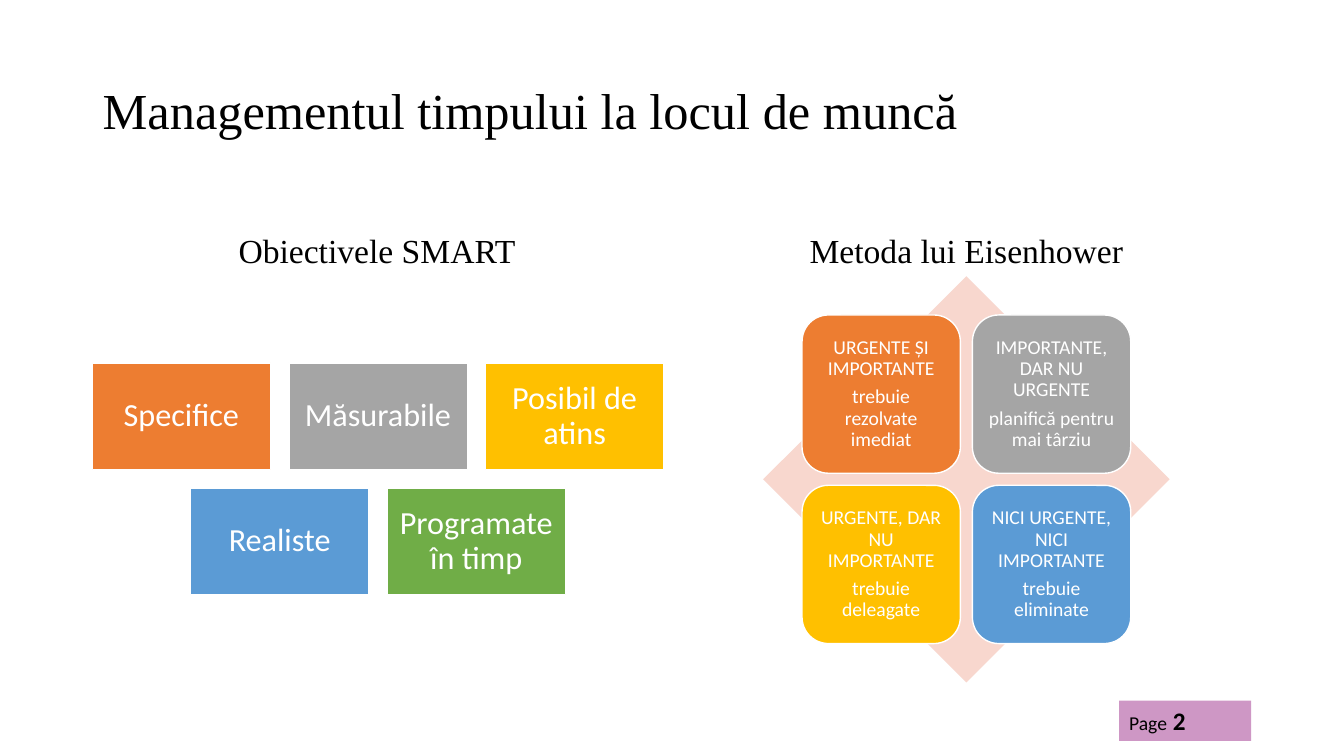
"""Builds the slide on time management: SMART goals and the Eisenhower matrix."""
from lxml import etree
from pptx import Presentation
from pptx.dml.color import RGBColor
from pptx.enum.shapes import MSO_SHAPE
from pptx.enum.text import MSO_ANCHOR, PP_ALIGN
from pptx.oxml.ns import qn
from pptx.util import Inches, Pt

RECTANGLE, ROUNDED, DIAMOND = MSO_SHAPE.RECTANGLE, MSO_SHAPE.ROUNDED_RECTANGLE, MSO_SHAPE.DIAMOND
LEFT, CENTER = PP_ALIGN.LEFT, PP_ALIGN.CENTER
TOP, MIDDLE, BOTTOM = MSO_ANCHOR.TOP, MSO_ANCHOR.MIDDLE, MSO_ANCHOR.BOTTOM

BLACK = RGBColor(0x00, 0x00, 0x00)
WHITE = RGBColor(0xFF, 0xFF, 0xFF)
ORANGE = RGBColor(0xED, 0x7D, 0x31)
GRAY = RGBColor(0xA5, 0xA5, 0xA5)
GOLD = RGBColor(0xFF, 0xC0, 0x00)
BLUE = RGBColor(0x5B, 0x9B, 0xD5)
GREEN = RGBColor(0x70, 0xAD, 0x47)
PINK = RGBColor(0xF8, 0xD7, 0xCE)
PURPLE = RGBColor(0x9F, 0x31, 0x8D)
SERIF, SANS = "Times New Roman", "Calibri"

HEADINGS = [
    ("Managementul timpului la locul de muncă", (0.92, 0.4, 11.5, 1.45), 36, LEFT, MIDDLE),
    ("Obiectivele SMART", (0.92, 1.84, 5.64, 0.9), 24, CENTER, BOTTOM),
    ("Metoda lui Eisenhower", (6.75, 1.84, 5.67, 0.9), 24, CENTER, BOTTOM),
]
SMART_ROWS = [
    [("Specifice", ORANGE), ("Măsurabile", GRAY), ("Posibil de atins", GOLD)],
    [("Realiste", BLUE), ("Programate în timp", GREEN)],
]
MATRIX = [
    [(("URGENTE ȘI IMPORTANTE", "trebuie rezolvate imediat"), ORANGE),
     (("IMPORTANTE, DAR NU URGENTE", "planifică pentru mai târziu"), GRAY)],
    [(("URGENTE, DAR NU IMPORTANTE", "trebuie deleagate"), GOLD),
     (("NICI URGENTE, NICI IMPORTANTE", "trebuie eliminate"), BLUE)],
]
PAGE_PARTS = [("Page", 14, False), (" 2", 18, True)]

GOAL_WIDTH, GOAL_HEIGHT, GOAL_GAP = 1.77, 1.06, 0.18
GOALS_CENTER, GOALS_TOP = 3.75, 3.6
DIAMOND_LEFT, DIAMOND_TOP, DIAMOND_SIZE = 7.57, 2.74, 4.03
QUADRANT_SIZE, QUADRANT_GAP = 1.57, 0.12


def write(frame, lines, size, font, color, align, anchor, inset=None, after=0):
    """Fill a text frame with evenly styled paragraphs."""
    frame.word_wrap = True
    frame.vertical_anchor = anchor
    if inset is not None:
        frame.margin_left = frame.margin_right = Inches(inset)
        frame.margin_top = frame.margin_bottom = Inches(inset)
    frame.text = "\n".join(lines)
    for paragraph in frame.paragraphs:
        paragraph.alignment = align
        paragraph.line_spacing = 0.9
        paragraph.space_after = Pt(after)
        for run in paragraph.runs:
            run.font.size = Pt(size)
            run.font.name = font
            run.font.color.rgb = color


def add_block(slide, kind, box, fill, outlined=False):
    """Add a flat filled shape, with a white outline if asked."""
    block = slide.shapes.add_shape(kind, *map(Inches, box))
    block.shadow.inherit = False
    block.fill.solid()
    block.fill.fore_color.rgb = fill
    if outlined:
        block.line.color.rgb = WHITE
        block.line.width = Pt(1)
    else:
        block.line.fill.background()
    return block


def add_goals(slide):
    """Add the SMART goals in centred rows."""
    for row, goals in enumerate(SMART_ROWS):
        row_width = len(goals) * (GOAL_WIDTH + GOAL_GAP) - GOAL_GAP
        top = GOALS_TOP + row * (GOAL_HEIGHT + GOAL_GAP)
        for column, (goal, fill) in enumerate(goals):
            left = GOALS_CENTER - row_width / 2 + column * (GOAL_WIDTH + GOAL_GAP)
            block = add_block(slide, RECTANGLE, (left, top, GOAL_WIDTH, GOAL_HEIGHT), fill, True)
            write(block.text_frame, [goal], 23, SANS, WHITE, CENTER, MIDDLE, 0.1)


def add_matrix(slide):
    """Add the diamond with the four quadrants centred on it."""
    add_block(slide, DIAMOND, (DIAMOND_LEFT, DIAMOND_TOP, DIAMOND_SIZE, DIAMOND_SIZE), PINK)
    step = QUADRANT_SIZE + QUADRANT_GAP
    margin = (DIAMOND_SIZE - step - QUADRANT_SIZE) / 2
    for row, quadrants in enumerate(MATRIX):
        for column, (lines, fill) in enumerate(quadrants):
            box = (DIAMOND_LEFT + margin + column * step, DIAMOND_TOP + margin + row * step,
                   QUADRANT_SIZE, QUADRANT_SIZE)
            quadrant = add_block(slide, ROUNDED, box, fill, True)
            write(quadrant.text_frame, lines, 14, SANS, WHITE, CENTER, MIDDLE, 0.06, 5)


def add_page_label(slide):
    """Add the half-transparent page label."""
    label = add_block(slide, RECTANGLE, (11.1, 6.95, 1.31, 0.4), PURPLE)
    color = label.fill._xPr.find(qn("a:solidFill")).find(qn("a:srgbClr"))
    etree.SubElement(color, qn("a:alpha")).set("val", "50000")
    label.text_frame.vertical_anchor = TOP
    paragraph = label.text_frame.paragraphs[0]
    paragraph.alignment = LEFT
    for text, size, bold in PAGE_PARTS:
        run = paragraph.add_run()
        run.text = text
        run.font.size = Pt(size)
        run.font.bold = bold
        run.font.name = SANS
        run.font.color.rgb = BLACK


def main():
    """Build and save the slide."""
    presentation = Presentation()
    presentation.slide_width = Inches(13.33)
    presentation.slide_height = Inches(7.5)
    slide = presentation.slides.add_slide(presentation.slide_layouts[6])
    for text, box, size, align, anchor in HEADINGS:
        heading = slide.shapes.add_textbox(*map(Inches, box))
        write(heading.text_frame, [text], size, SERIF, BLACK, align, anchor)
    add_page_label(slide)
    add_goals(slide)
    add_matrix(slide)
    presentation.save("out.pptx")


if __name__ == "__main__":
    main()
